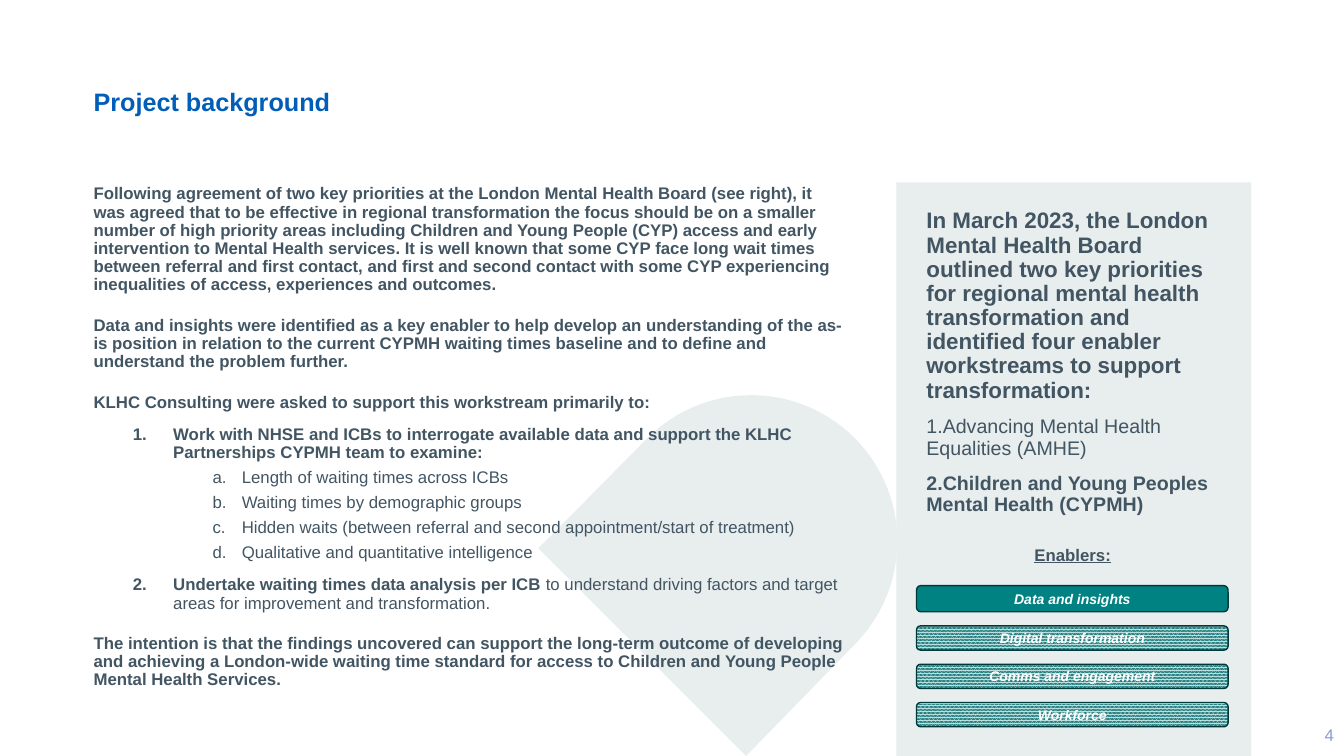
"""Build the project background slide with its priorities panel and enabler buttons."""
import dataclasses
import math
import typing

import lxml.etree
import pptx
import pptx.dml.color
import pptx.enum.dml
import pptx.enum.shapes
import pptx.enum.text
import pptx.oxml.ns
import pptx.util

Inches = pptx.util.Inches
Pt = pptx.util.Pt
Align = pptx.enum.text.PP_ALIGN
Anchor = pptx.enum.text.MSO_ANCHOR
Preset = pptx.enum.shapes.MSO_SHAPE


@dataclasses.dataclass(frozen=True)
class Theme:
    """Colours and type sizes of the slide."""
    font: str = "Arial"
    title: str = "005EB8"
    text: str = "425563"
    panel: str = "E8EDEE"
    page: str = "8C9DCD"
    button: str = "008283"
    button_line: str = "003939"
    button_text: str = "FFFFFF"
    pattern_front: str = "BADFDC"
    pattern_back: str = "298082"
    title_size: int = 18
    lead_size: int = 16
    priority_size: int = 14
    body_size: int = 12
    button_size: int = 10


THEME = Theme()


class Box(typing.NamedTuple):
    """Left, top, width and height in inches."""
    left: float
    top: float
    width: float
    height: float

    def lengths(self) -> list[int]:
        """Return the four values as lengths."""
        return [Inches(value) for value in self]


class Run(typing.NamedTuple):
    """A stretch of text in one style."""
    text: str
    bold: bool = False
    italic: bool = False
    underline: bool = False


@dataclasses.dataclass(frozen=True)
class Paragraph:
    """A paragraph with its spacing, indent and numbering."""
    runs: list[Run]
    size: int = THEME.body_size
    color: str = THEME.text
    before: int = 10
    after: int = 0
    align: Align = Align.LEFT
    level: int = 0
    margin: float = 0
    indent: float = 0
    numbering: str = ""
    spacing: float = 0.9


def numbered(*runs: Run, after: int = 0) -> Paragraph:
    """Return a first-level numbered paragraph."""
    return Paragraph(list(runs), after=after, margin=0.79, indent=-0.4, numbering="arabicPeriod")


def lettered(text: str) -> Paragraph:
    """Return a second-level lettered paragraph."""
    return Paragraph([Run(text)], before=5, level=1, margin=1.47, indent=-0.29, numbering="alphaLcPeriod")


def priority(text: str, bold: bool, after: int) -> Paragraph:
    """Return a numbered priority without indent."""
    return Paragraph([Run(text, bold)], THEME.priority_size, after=after, numbering="arabicPeriod")


BODY = [
    Paragraph([Run("Following agreement of two key priorities at the London Mental Health Board (see right), it was agreed that to be effective in regional transformation the focus should be on a smaller number of high priority areas including Children and Young People (CYP) access and early intervention to Mental Health services. It is well known that some CYP face long wait times between referral and first contact, and first and second contact with some CYP experiencing inequalities of access, experiences and outcomes.", True)], before=0, after=6),
    Paragraph([Run("Data and insights were identified as a key enabler to help develop an understanding of the as-is position in relation to the current CYPMH waiting times baseline and to define and understand the problem further.", True)], after=6),
    Paragraph([Run("KLHC Consulting were asked to support this workstream primarily to:", True)]),
    numbered(Run("Work with NHSE and ICBs to interrogate available data and support the KLHC Partnerships CYPMH team to examine:", True)),
    lettered("Length of waiting times across ICBs"),
    lettered("Waiting times by demographic groups"),
    lettered("Hidden waits (between referral and second appointment/start of treatment)"),
    lettered("Qualitative and quantitative intelligence"),
    numbered(Run("Undertake waiting times data analysis per ICB ", True), Run("to understand driving factors and target areas for improvement and transformation."), after=6),
    Paragraph([Run("The intention is that the findings uncovered can support the long-term outcome of developing and achieving a London-wide waiting time standard for access to Children and Young People Mental Health Services.", True)]),
]
PRIORITIES = [
    Paragraph([Run("In March 2023, the London Mental Health Board outlined two key priorities for regional mental health transformation and identified four enabler workstreams to support transformation:", True)], THEME.lead_size, before=0),
    priority("Advancing Mental Health Equalities (AMHE)", False, 0),
    priority("Children and Young Peoples Mental Health (CYPMH)", True, 12),
    Paragraph([Run("Enablers:", True, underline=True)], align=Align.CENTER),
]
OTHER_ENABLERS = ["Digital transformation", "Comms and engagement", "Workforce"]


def rgb(value: str) -> pptx.dml.color.RGBColor:
    """Return a colour from its hexadecimal form."""
    return pptx.dml.color.RGBColor.from_string(value)


def assign(target: typing.Any, values: dict[str, typing.Any]) -> None:
    """Set each named attribute on the target."""
    for name, value in values.items():
        setattr(target, name, value)


def write(shape: typing.Any, paragraphs: list[Paragraph], anchor: Anchor = Anchor.TOP) -> None:
    """Fill a shape with formatted paragraphs."""
    frame = shape.text_frame
    assign(frame, {"word_wrap": True, "vertical_anchor": anchor})
    for index, item in enumerate(paragraphs):
        paragraph = frame.add_paragraph() if index else frame.paragraphs[0]
        if item.numbering:
            properties = paragraph._p.get_or_add_pPr()
            properties.set("marL", str(Inches(item.margin)))
            properties.set("indent", str(Inches(item.indent)))
            lxml.etree.SubElement(properties, pptx.oxml.ns.qn("a:buAutoNum"), type=item.numbering)
        assign(paragraph, {
            "level": item.level, "alignment": item.align, "line_spacing": item.spacing,
            "space_before": Pt(item.before), "space_after": Pt(item.after),
        })
        for part in item.runs:
            run = paragraph.add_run()
            run.text = part.text
            assign(run.font, {
                "name": THEME.font, "size": Pt(item.size), "bold": part.bold,
                "italic": part.italic, "underline": part.underline,
            })
            run.font.color.rgb = rgb(item.color)


def add_text(slide: typing.Any, box: Box, paragraphs: list[Paragraph], anchor: Anchor = Anchor.TOP) -> None:
    """Add a text box."""
    write(slide.shapes.add_textbox(*box.lengths()), paragraphs, anchor)


def paint_panel(shape: typing.Any) -> None:
    """Give a background shape its plain fill."""
    shape.shadow.inherit = False
    shape.fill.solid()
    shape.fill.fore_color.rgb = rgb(THEME.panel)
    shape.line.fill.background()


def add_teardrop(slide: typing.Any, center_x: float, center_y: float, radius: float) -> None:
    """Add a half circle on a slanted square that runs off to the lower left."""
    angles = [math.radians(225 + 3 * step) for step in range(61)]
    arc = [(center_x + radius * math.cos(angle), center_y + radius * math.sin(angle)) for angle in angles]
    points = [(Inches(x), Inches(y)) for x, y in [(5.34, 5.44), *arc, (7.4, 7.5)]]
    builder = slide.shapes.build_freeform(*points[0])
    builder.add_line_segments(points[1:], close=True)
    paint_panel(builder.convert_to_shape())


def add_button(slide: typing.Any, label: str, top: float, height: float, active: bool) -> None:
    """Add an enabler button, plain when active and patterned otherwise."""
    shape = slide.shapes.add_shape(Preset.ROUNDED_RECTANGLE, *Box(9.09, top, 3.09, height).lengths())
    shape.shadow.inherit = False
    if active:
        shape.fill.solid()
        shape.fill.fore_color.rgb = rgb(THEME.button)
    else:
        shape.fill.patterned()
        shape.fill.pattern = pptx.enum.dml.MSO_PATTERN.PERCENT_80
        shape.fill.fore_color.rgb = rgb(THEME.pattern_front)
        shape.fill.back_color.rgb = rgb(THEME.pattern_back)
    shape.line.color.rgb = rgb(THEME.button_line)
    shape.line.width = Pt(1)
    text = Paragraph([Run(label, True, True)], THEME.button_size, THEME.button_text, 0, align=Align.CENTER, spacing=1.0)
    write(shape, [text], Anchor.MIDDLE)


def main() -> None:
    """Build and save the presentation."""
    presentation = pptx.Presentation()
    assign(presentation, {"slide_width": Inches(13.33), "slide_height": Inches(7.5)})
    slide = presentation.slides.add_slide(presentation.slide_layouts[6])
    paint_panel(slide.shapes.add_shape(Preset.RECTANGLE, *Box(8.89, 1.81, 3.52, 5.69).lengths()))
    add_teardrop(slide, 7.45, 5.37, 1.45)
    page = Paragraph([Run("4")], color=THEME.page, before=0, align=Align.RIGHT, spacing=1.0)
    add_text(slide, Box(12.36, 7.09, 0.97, 0.4), [page], Anchor.MIDDLE)
    title = Paragraph([Run("Project background", True)], THEME.title_size, THEME.title, 0)
    add_text(slide, Box(0.83, 0.84, 6.07, 0.8), [title])
    add_text(slide, Box(0.83, 1.79, 7.67, 5.18), BODY)
    add_text(slide, Box(9.09, 2.03, 3.1, 2.58), PRIORITIES)
    add_button(slide, "Data and insights", 5.81, 0.26, True)
    for index, label in enumerate(OTHER_ENABLERS):
        add_button(slide, label, 6.21 + 0.38 * index, 0.24, False)
    presentation.save("out.pptx")


if __name__ == "__main__":
    main()
